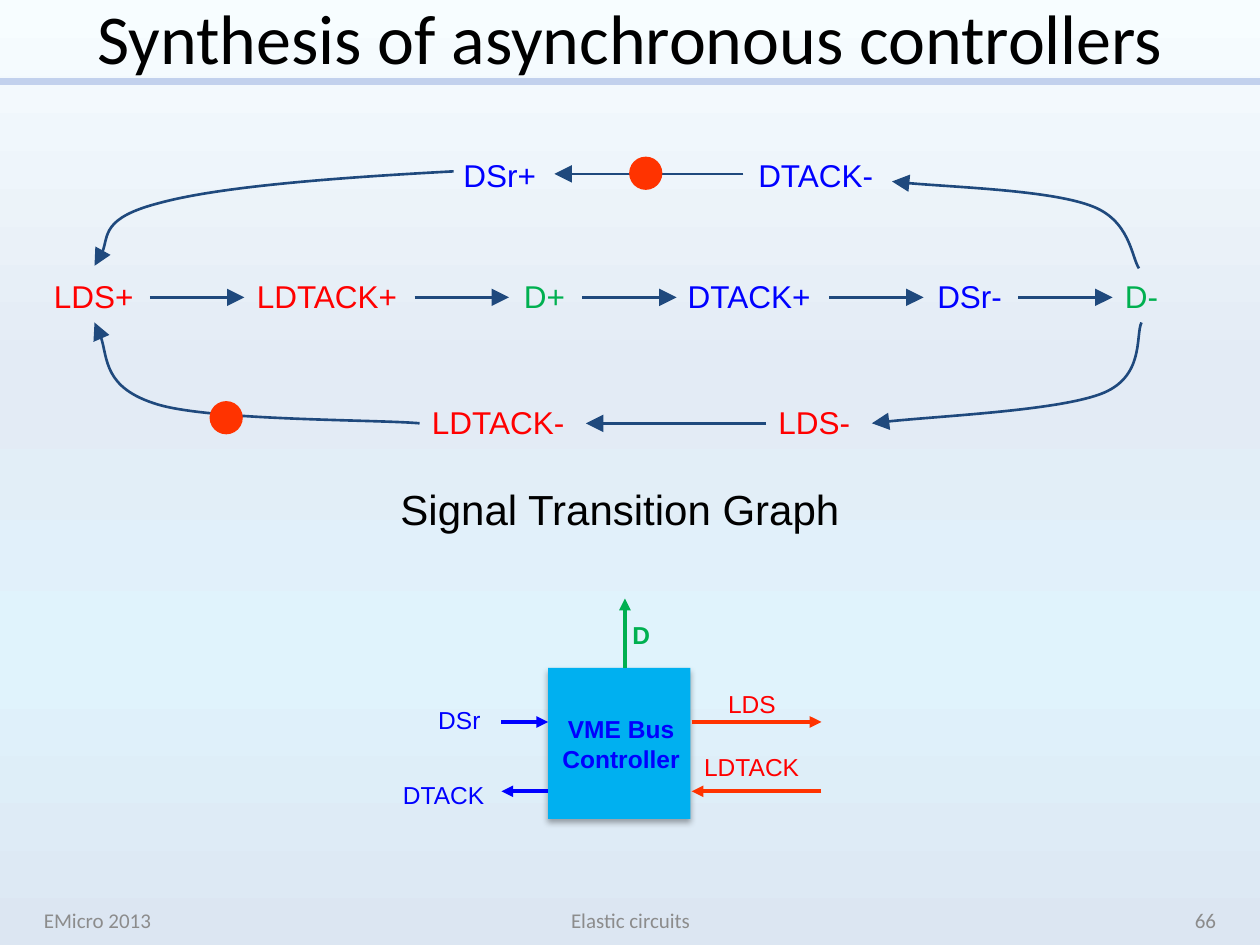
from copy import deepcopy

from lxml import etree
from pptx import Presentation
from pptx.dml.color import RGBColor
from pptx.enum.shapes import MSO_CONNECTOR, MSO_SHAPE
from pptx.enum.text import MSO_ANCHOR, MSO_AUTO_SIZE, PP_ALIGN
from pptx.oxml.ns import qn
from pptx.util import Pt

PX = 9144  # 100 px to the inch
STRAIGHT = MSO_CONNECTOR.STRAIGHT
RECT, OVAL = MSO_SHAPE.RECTANGLE, MSO_SHAPE.OVAL
LEFT, CENTER, RIGHT = PP_ALIGN.LEFT, PP_ALIGN.CENTER, PP_ALIGN.RIGHT
TOP, MIDDLE = MSO_ANCHOR.TOP, MSO_ANCHOR.MIDDLE

RED, GREEN, BLUE = "FF0000", "00B050", "0000FF"
NAVY, ORANGE, BLACK, GREY = "1F497D", "FF3300", "000000", "8C8C8C"


def rgb(value):
    return RGBColor.from_string(value)


def emu(*lengths):
    return [n * PX for n in lengths]


def format_text(tf, text, size, color, font="Arial", bold=False, align=LEFT, anchor=TOP):
    tf.text = text
    tf.vertical_anchor = anchor
    for p in tf.paragraphs:
        p.alignment = align
        for r in p.runs:
            r.font.name, r.font.size, r.font.bold = font, Pt(size), bold
            r.font.color.rgb = rgb(color)


def add_label(shapes, box, text, size, color, wrap=False, **style):
    tf = shapes.add_textbox(*emu(*box)).text_frame
    tf.word_wrap = wrap
    if not wrap:
        tf.auto_size = MSO_AUTO_SIZE.SHAPE_TO_FIT_TEXT
    format_text(tf, text, size, color, **style)


def style_line(shape, color, width, head=None):
    """Set the line; head is the size of the arrowhead at its end."""
    shape.line.color.rgb = rgb(color)
    shape.line.width = Pt(width)
    if head:
        etree.SubElement(shape.line._get_or_add_ln(), qn("a:tailEnd"),
                         type="triangle", w=head, len=head)


def add_line(shapes, x1, y1, x2, y2, color, width, head=None):
    line = shapes.add_connector(STRAIGHT, *emu(x1, y1, x2, y2))
    style_line(line, color, width, head)
    etree.SubElement(line._element.spPr, qn("a:effectLst"))


def add_curve(shapes, points, color, width, head):
    """Draw cubic Bezier segments through a start and triples of points."""
    builder = shapes.build_freeform(*points[0], scale=PX)
    builder.add_line_segments(points[1:], close=False)
    curve = builder.convert_to_shape()
    curve.fill.background()
    curve.shadow.inherit = False
    style_line(curve, color, width, head)
    path = curve._element.find(".//" + qn("a:path"))
    steps = path.findall(qn("a:lnTo"))
    for i in range(0, len(steps), 3):
        bezier = etree.SubElement(path, qn("a:cubicBezTo"))
        for step in steps[i:i + 3]:
            bezier.append(step[0])
            path.remove(step)


def set_background(s, stops):
    fill = s.background.fill
    fill.gradient()
    fill.gradient_angle = 270
    stop_list = s._element.find(".//" + qn("a:gsLst"))
    while len(stop_list) < len(stops):
        stop_list.append(deepcopy(stop_list[0]))
    for gs, (position, color) in zip(stop_list, stops):
        gs.set("pos", str(position * 1000))
        for child in list(gs):
            gs.remove(child)
        etree.SubElement(gs, qn("a:srgbClr"), val=color)


def add_header(s, x, y, w, h):
    add_line(s.shapes, 0, 65, 1000, 65, "C2D1ED", 4)
    title = s.shapes.title
    title.left, title.top, title.width, title.height = emu(x, y, w, h)
    format_text(title.text_frame, "Synthesis of asynchronous controllers", 40, BLACK,
                font="Calibri", align=CENTER, anchor=MIDDLE)
    title.text_frame.auto_size = MSO_AUTO_SIZE.NONE


def add_transition_graph(s, x, y):
    shapes = s.shapes.add_group_shape().shapes
    top, middle, bottom = 0, 96, 196
    events = [
        ("LDS+", 0, middle, 83, RED), ("LDTACK+", 161, middle, 133, RED),
        ("D+", 373, middle, 53, GREEN), ("DTACK+", 503, middle, 119, BLUE),
        ("DSr-", 701, middle, 72, BLUE), ("D-", 850, middle, 47, GREEN),
        ("DTACK-", 559, top, 113, BLUE), ("LDS-", 575, bottom, 77, RED),
        ("LDTACK-", 300, bottom, 127, RED), ("DSr+", 325, top, 78, BLUE),
    ]
    for text, left, row, width, color in events:
        add_label(shapes, (x + left, y + row, width, 40), text, 18, color)

    arrows = [(start, start + 75, middle + 21) for start in (86, 296, 429, 625, 775)]
    arrows += [(575, 432, bottom + 21), (557, 407, top + 19)]
    for start, end, row in arrows:
        add_line(shapes, x + start, y + row, x + end, y + row, NAVY, 1.5, "lg")

    curves = [
        [(327, 17), (234, 22), (142, 29), (94, 42), (47, 54), (53, 81), (42, 92)],
        [(300, 217), (266, 214), (135, 215), (92, 202), (49, 189), (52, 151), (42, 137)],
        [(871, 94), (865, 85), (864, 55), (832, 44), (799, 32), (708, 29), (675, 25)],
        [(873, 137), (868, 147), (876, 181), (840, 194), (804, 207), (696, 212), (659, 217)],
    ]
    for curve in curves:
        add_curve(shapes, [(x + dx, y + dy) for dx, dy in curve], NAVY, 1.5, "lg")

    for dx, dy in [(467, 6), (134, 200)]:
        token = shapes.add_shape(OVAL, *emu(x + dx, y + dy, 25, 25))
        token.shadow.inherit = False
        token.fill.solid()
        token.fill.fore_color.rgb = rgb(ORANGE)
        style_line(token, ORANGE, 1)


def add_soft_shadow(shape):
    shape.shadow.inherit = False
    effects = shape._element.spPr.find(qn("a:effectLst"))
    shadow = etree.SubElement(effects, qn("a:outerShdw"), blurRad=str(Pt(3.5)),
                              dist=str(Pt(2.2)), dir="5400000", rotWithShape="0")
    color = etree.SubElement(shadow, qn("a:srgbClr"), val=BLACK)
    etree.SubElement(color, qn("a:alpha"), val="32000")


def add_controller(s, x, y):
    shapes = s.shapes.add_group_shape().shapes
    block = shapes.add_shape(RECT, *emu(x + 125, y + 55, 113, 120))
    block.fill.solid()
    block.fill.fore_color.rgb = rgb("00B0F0")
    block.line.fill.background()
    add_soft_shadow(block)

    wires = [
        (342, 153, 239, 153, ORANGE), (239, 98, 342, 98, ORANGE),
        (186, 55, 186, 0, GREEN),
        (88, 98, 125, 98, BLUE), (125, 153, 88, 153, BLUE),
    ]
    for x1, y1, x2, y2, color in wires:
        add_line(shapes, x + x1, y + y1, x + x2, y + y2, color, 2.25, "med")

    signals = [
        ("LDS", 258, 67, 58, RED, False), ("LDTACK", 239, 117, 97, RED, False),
        ("D", 182, 12, 34, GREEN, True),
        ("DSr", 28, 80, 54, BLUE, False), ("DTACK", 0, 139, 86, BLUE, False),
    ]
    for text, dx, dy, width, color, bold in signals:
        add_label(shapes, (x + dx, y + dy, width, 33), text, 14, color, bold=bold)
    add_label(shapes, (x + 126, y + 87, 114, 57), "VME Bus\nController", 14, BLUE,
              bold=True, align=CENTER)


def add_footer(s, y, h):
    parts = [("EMicro 2013", 25, 233, LEFT), ("Elastic circuits", 342, 317, CENTER),
             ("66", 742, 233, RIGHT)]
    for text, x, w, align in parts:
        add_label(s.shapes, (x, y, w, h), text, 12, GREY, wrap=True,
                  font="Calibri", align=align, anchor=MIDDLE)


def main():
    prs = Presentation()
    prs.slide_width, prs.slide_height = emu(1000, 750)
    s = prs.slides.add_slide(prs.slide_layouts[5])
    set_background(s, [(0, "F7FDFF"), (40, "E3EBF5"), (70, "E0F3FC"), (100, "DCE6F2")])
    add_header(s, 50, 0, 900, 58)
    add_transition_graph(s, 33, 119)
    add_controller(s, 310, 475)
    add_label(s.shapes, (308, 379, 372, 50), "Signal Transition Graph", 24, BLACK)
    add_footer(s, 710, 40)
    prs.save("out.pptx")


if __name__ == "__main__":
    main()
